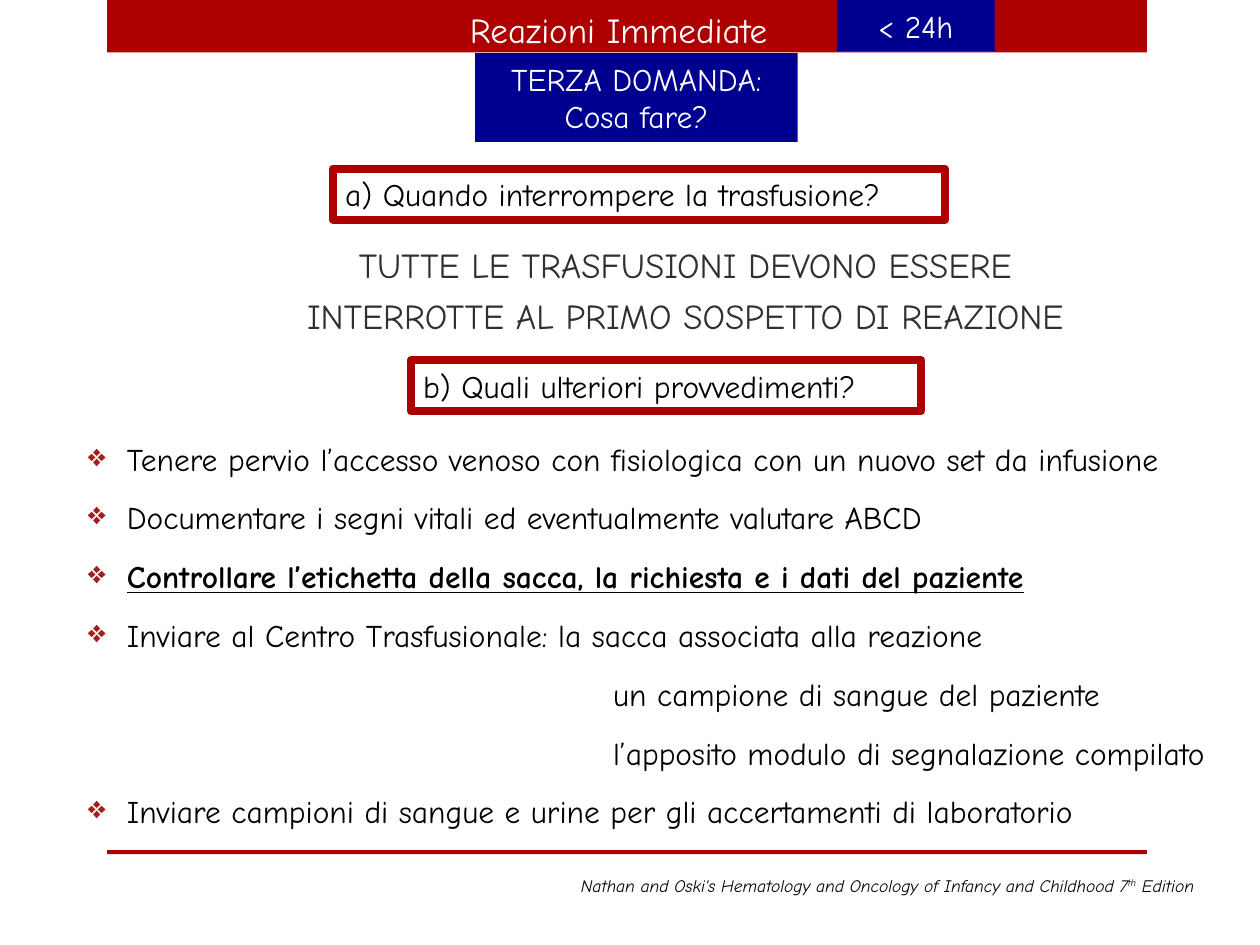
"""Build the slide on what to do in immediate transfusion reactions."""
import pptx
import pptx.dml.color
import pptx.enum.shapes
import pptx.enum.text
import pptx.oxml.ns
import pptx.util
from lxml import etree

Cm, Pt = pptx.util.Cm, pptx.util.Pt
RGB = pptx.dml.color.RGBColor.from_string
ALIGN, ANCHOR = pptx.enum.text.PP_ALIGN, pptx.enum.text.MSO_ANCHOR
qn = pptx.oxml.ns.qn
COLORS = {"red": "AD0101", "blue": "000090", "white": "FFFFFF",
          "black": "000000", "gray": "303030", "bullet": "A12121"}


def add_box(left, top, width, height, fill=None, line=None):
    sp = s.shapes.add_shape(pptx.enum.shapes.MSO_SHAPE.RECTANGLE,
                            Cm(left), Cm(top), Cm(width), Cm(height))
    sp.shadow.inherit = False
    if fill:
        sp.fill.solid()
        sp.fill.fore_color.rgb = RGB(COLORS[fill])
    else:
        sp.fill.background()
    if line:
        sp.line.color.rgb = RGB(COLORS[line])
        sp.line.width = Pt(4.5)
    else:
        sp.line.fill.background()
    return sp


def write(sp, lines, size, color, align=ALIGN.LEFT, anchor=ANCHOR.MIDDLE):
    tf = sp.text_frame
    tf.word_wrap = True
    tf.auto_size = pptx.enum.text.MSO_AUTO_SIZE.NONE
    tf.vertical_anchor = anchor
    tf.text = "\n".join(lines)
    for p in tf.paragraphs:
        p.alignment = align
        p.font.name = "Comic Neue"
        p.font.size = Pt(size)
        p.font.color.rgb = RGB(COLORS[color])
    return tf.paragraphs


prs = pptx.Presentation()
prs.slide_width, prs.slide_height = Cm(25.4), Cm(19.05)
s = prs.slides.add_slide(prs.slide_layouts[5])

add_box(2.16, 0, 20.96, 1.06, fill="red")
add_box(2.16, 17.14, 20.96, 0.08, fill="red")

title = s.shapes.title
title.left, title.top, title.width, title.height = Cm(9.22), Cm(0.03), Cm(7.2), Cm(1.11)
write(title, ["Reazioni Immediate"], 20, "white")
s.shapes.element.append(title.element)

write(add_box(9.58, 1.07, 6.5, 1.79, fill="blue"),
      ["TERZA DOMANDA:", "Cosa fare?"], 18, "white", ALIGN.CENTER)
write(add_box(16.87, 0, 3.18, 1.03, fill="blue"), ["< 24h"], 18, "white", ALIGN.CENTER)

for left, top, width, question in [
    (6.71, 3.4, 12.34, "a) Quando interrompere la trasfusione?"),
    (8.28, 7.26, 10.29, "b) Quali ulteriori provvedimenti?"),
]:
    write(add_box(left, top, width, 1.03, line="red"), [question], 18, "black")

answer = s.shapes.add_textbox(Cm(2.24), Cm(4.78), Cm(23.16), Cm(2.2))
for p in write(answer, ["TUTTE LE TRASFUSIONI DEVONO ESSERE",
                        "INTERROTTE AL PRIMO SOSPETTO DI REAZIONE"],
               20, "gray", ALIGN.CENTER, ANCHOR.TOP):
    p.space_after = Pt(5)

steps = [
    "Tenere pervio l’accesso venoso con fisiologica con un nuovo set da infusione",
    "Documentare i segni vitali ed eventualmente valutare ABCD",
    "Controllare l’etichetta della sacca, la richiesta e i dati del paziente",
    "Inviare al Centro Trasfusionale: la sacca associata alla reazione",
    "un campione di sangue del paziente",
    "l’apposito modulo di segnalazione compilato",
    "Inviare campioni di sangue e urine per gli accertamenti di laboratorio",
]
box = s.shapes.add_textbox(Cm(1.52), Cm(8.74), Cm(23.98), Cm(9.4))
for i, p in enumerate(write(box, steps, 18, "black", anchor=ANCHOR.TOP)):
    p.space_after = Pt(12)
    pPr = p._p.get_or_add_pPr()
    if i in (4, 5):
        pPr.set("marL", str(Cm(10.59)))
        continue
    pPr.set("marL", str(Cm(0.79)))
    pPr.set("indent", str(-Cm(0.79)))
    bullet_color = etree.Element(qn("a:buClr"))
    etree.SubElement(bullet_color, qn("a:srgbClr"), val=COLORS["bullet"])
    bullet = etree.Element(qn("a:buChar"), char="❖")
    pPr.find(qn("a:spcAft")).addnext(bullet_color)
    bullet_color.addnext(bullet)
    if i == 2:
        p.runs[0].font.bold = True
        p.runs[0].font.underline = True

source = s.shapes.add_textbox(Cm(11.46), Cm(17.5), Cm(13.94), Cm(0.69))
p = write(source, ["Nathan and Oski's Hematology and Oncology of Infancy and Childhood 7"],
          10, "black")[0]
p.font.italic = True
for text, baseline in [("th", "30000"), (" Edition", "0")]:
    r = p.add_run()
    r.text = text
    r.font._element.set("baseline", baseline)

prs.save("out.pptx")
